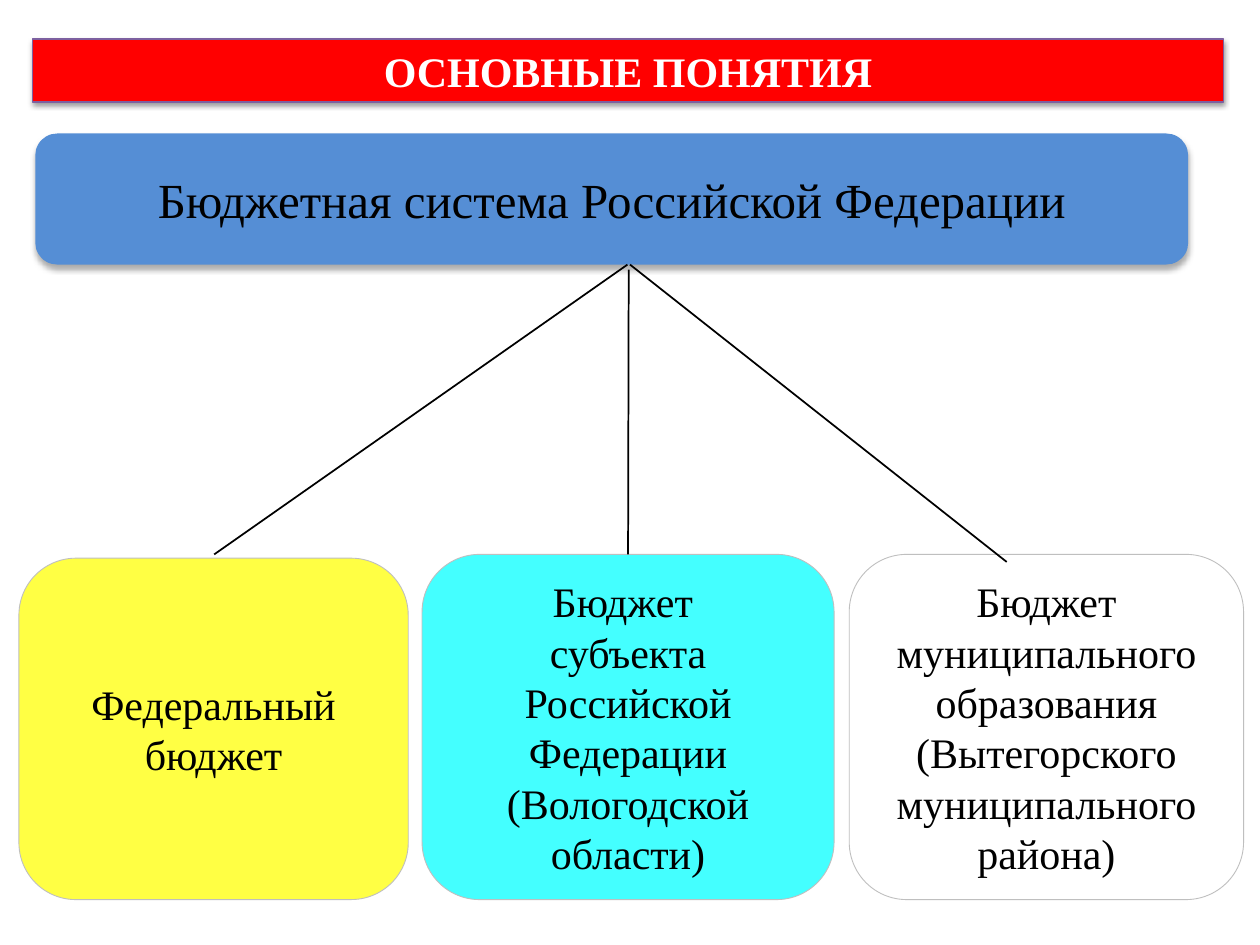
"""Builds a slide on the three levels of the Russian budget system."""
import pptx
import pptx.dml.color
import pptx.enum.shapes
import pptx.enum.text
import pptx.oxml
import pptx.oxml.ns
import pptx.util
from pptx.util import Inches

COLORS = {
    "red": "FF0000", "violet": "7D60A0", "blue": "558ED5", "yellow": "FFFF44",
    "cyan": "44FFFF", "white": "FFFFFF", "black": "000000", "grey": "BFBFBF",
}
ROUNDED = pptx.enum.shapes.MSO_SHAPE.FLOWCHART_ALTERNATE_PROCESS


def rgb(name):
    return pptx.dml.color.RGBColor.from_string(COLORS[name])


def dress(panel, fill, paragraphs, size, ink="black", bold=False, shadow=None):
    panel.fill.solid()
    panel.fill.fore_color.rgb = rgb(fill)
    frame = panel.text_frame
    frame.word_wrap = True
    frame.auto_size = pptx.enum.text.MSO_AUTO_SIZE.NONE
    frame.vertical_anchor = pptx.enum.text.MSO_ANCHOR.MIDDLE
    frame.text = "\n".join(paragraphs)
    for paragraph in frame.paragraphs:
        paragraph.alignment = pptx.enum.text.PP_ALIGN.CENTER
        for run in paragraph.runs:
            run.font.name = "Times New Roman"
            run.font.size = pptx.util.Pt(size)
            run.font.bold = bold
            run.font.color.rgb = rgb(ink)
    if shadow:
        blur, distance, alpha = shadow
        panel._element.spPr.append(pptx.oxml.parse_xml(
            f'<a:effectLst {pptx.oxml.ns.nsdecls("a")}>'
            f'<a:outerShdw blurRad="{pptx.util.Pt(blur)}" dist="{pptx.util.Pt(distance)}"'
            f' dir="5400000" rotWithShape="0"><a:srgbClr val="{COLORS["black"]}">'
            f'<a:alpha val="{alpha * 1000}"/></a:srgbClr></a:outerShdw></a:effectLst>'))


deck = pptx.Presentation()
deck.slide_width, deck.slide_height = Inches(10), Inches(7.5)
slide = deck.slides.add_slide(deck.slide_layouts[5])

heading = slide.shapes.title
heading.left, heading.top = Inches(0.26), Inches(0.31)
heading.width, heading.height = Inches(9.45), Inches(0.5)
heading.line.color.rgb = rgb("violet")
heading.line.width = pptx.util.Pt(0.75)
dress(heading, "red", ["ОСНОВНЫЕ ПОНЯТИЯ"], 24, "white", True, (3.1, 1.6, 38))

budget_system = slide.shapes.add_shape(
    ROUNDED, Inches(0.28), Inches(1.06), Inches(9.15), Inches(1.04))
budget_system.line.fill.background()
dress(budget_system, "blue", ["Бюджетная система Российской Федерации"], 28,
      shadow=(3.5, 2.2, 32))

levels = [
    (0.15, 4.43, 3.09, "yellow", ["Федеральный бюджет"]),
    (3.35, 4.4, 3.27, "cyan",
     ["Бюджет ", "субъекта Российской Федерации (Вологодской области)"]),
    (6.74, 4.4, 3.13, "white",
     ["Бюджет муниципального образования (Вытегорского муниципального района)"]),
]
budgets = []
for left, top, width, fill, paragraphs in levels:
    budget = slide.shapes.add_shape(
        ROUNDED, Inches(left), Inches(top), Inches(width), Inches(7.14 - top))
    budget.shadow.inherit = False
    budget.line.color.rgb = rgb("grey")
    budget.line.width = pptx.util.Pt(0.5)
    dress(budget, fill, paragraphs, 24)
    budgets.append(budget)

branches = []
for start_x, start_y, end_x, end_y in [
        (4.98, 2.1, 1.7, 4.4), (4.99, 2.14, 4.98, 4.4), (5, 2.1, 7.99, 4.46)]:
    branch = slide.shapes.add_connector(
        pptx.enum.shapes.MSO_CONNECTOR.STRAIGHT,
        Inches(start_x), Inches(start_y), Inches(end_x), Inches(end_y))
    branch.line.color.rgb = rgb("black")
    branch.line.width = pptx.util.Pt(1)
    branch._element.spPr.append(
        pptx.oxml.parse_xml(f'<a:effectLst {pptx.oxml.ns.nsdecls("a")}/>'))
    branches.append(branch)
branches[1].end_connect(budgets[1], 0)

deck.save("out.pptx")
